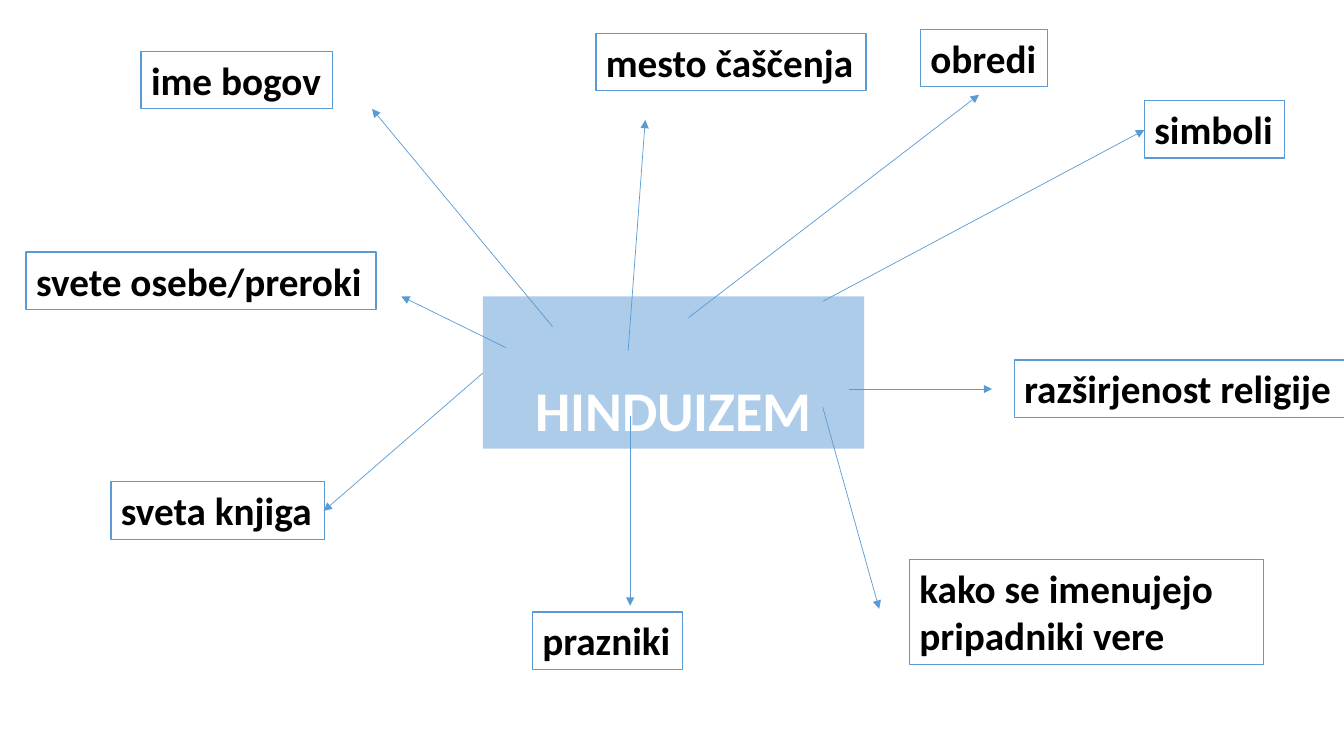
from lxml.etree import SubElement
from pptx import Presentation
from pptx.dml.color import RGBColor
from pptx.enum.shapes import MSO_CONNECTOR
from pptx.enum.text import MSO_ANCHOR, MSO_AUTO_SIZE, PP_ALIGN
from pptx.oxml.ns import qn
from pptx.util import Pt

PX = 9144
BLUE, WHITE, BLACK = "5B9BD5", "FFFFFF", "000000"


def paint(color, value):
    color.rgb = RGBColor.from_string(value)


def style_text(p, size, color):
    p.font.name = "Calibri"
    p.font.size = Pt(size)
    p.font.bold = True
    paint(p.font.color, color)


prs = Presentation()
prs.slide_width, prs.slide_height = 1333 * PX, 750 * PX
s = prs.slides.add_slide(prs.slide_layouts[5])

title = s.shapes.title
title.left, title.top, title.width, title.height = 479 * PX, 294 * PX, 378 * PX, 151 * PX
title.fill.solid()
paint(title.fill.fore_color, BLUE)
rgb = title.fill._xPr.find(qn("a:solidFill")).find(qn("a:srgbClr"))
SubElement(rgb, qn("a:alpha"), val="50000")
tf = title.text_frame
tf.text = "HINDUIZEM"
tf.word_wrap = True
tf.auto_size = MSO_AUTO_SIZE.NONE
tf.vertical_anchor = MSO_ANCHOR.BOTTOM
p = tf.paragraphs[0]
p.alignment = PP_ALIGN.CENTER
p.line_spacing = 0.9
style_text(p, 40, WHITE)

topics = [
    ("ime bogov", 140, 51, 190),
    ("sveta knjiga", 110, 478, 212),
    ("mesto čaščenja", 591, 33, 268),
    ("obredi", 913, 29, 126),
    ("prazniki", 528, 607, 149),
    ("razširjenost religije", 1006, 357, 328),
    ("svete osebe/preroki", 26, 250, 347),
    ("kako se imenujejo\npripadniki vere", 902, 555, 351),
    ("simboli", 1135, 100, 139),
]
for text, x, y, w in topics:
    two_lines = "\n" in text
    sp = s.shapes.add_textbox(x * PX, y * PX, w * PX, (104 if two_lines else 57) * PX)
    sp.fill.solid()
    paint(sp.fill.fore_color, WHITE)
    paint(sp.line.color, BLUE)
    sp.line.width = Pt(1)
    tf = sp.text_frame
    tf.text = text
    tf.word_wrap = two_lines
    tf.auto_size = MSO_AUTO_SIZE.SHAPE_TO_FIT_TEXT
    for p in tf.paragraphs:
        style_text(p, 28, BLACK)

arrows = [
    (623, 348, 640, 119),
    (683, 315, 971, 94),
    (816, 299, 1135, 129),
    (842, 386, 984, 386),
    (816, 404, 872, 604),
    (625, 413, 625, 601),
    (479, 370, 321, 507),
    (502, 345, 398, 294),
    (548, 324, 369, 108),
]
for ends in arrows:
    arrow = s.shapes.add_connector(MSO_CONNECTOR.STRAIGHT, *[v * PX for v in ends])
    paint(arrow.line.color, BLUE)
    arrow.line.width = Pt(0.5)
    SubElement(arrow.line._get_or_add_ln(), qn("a:tailEnd"), type="triangle")
    SubElement(arrow._element.spPr, qn("a:effectLst"))

prs.save("out.pptx")
